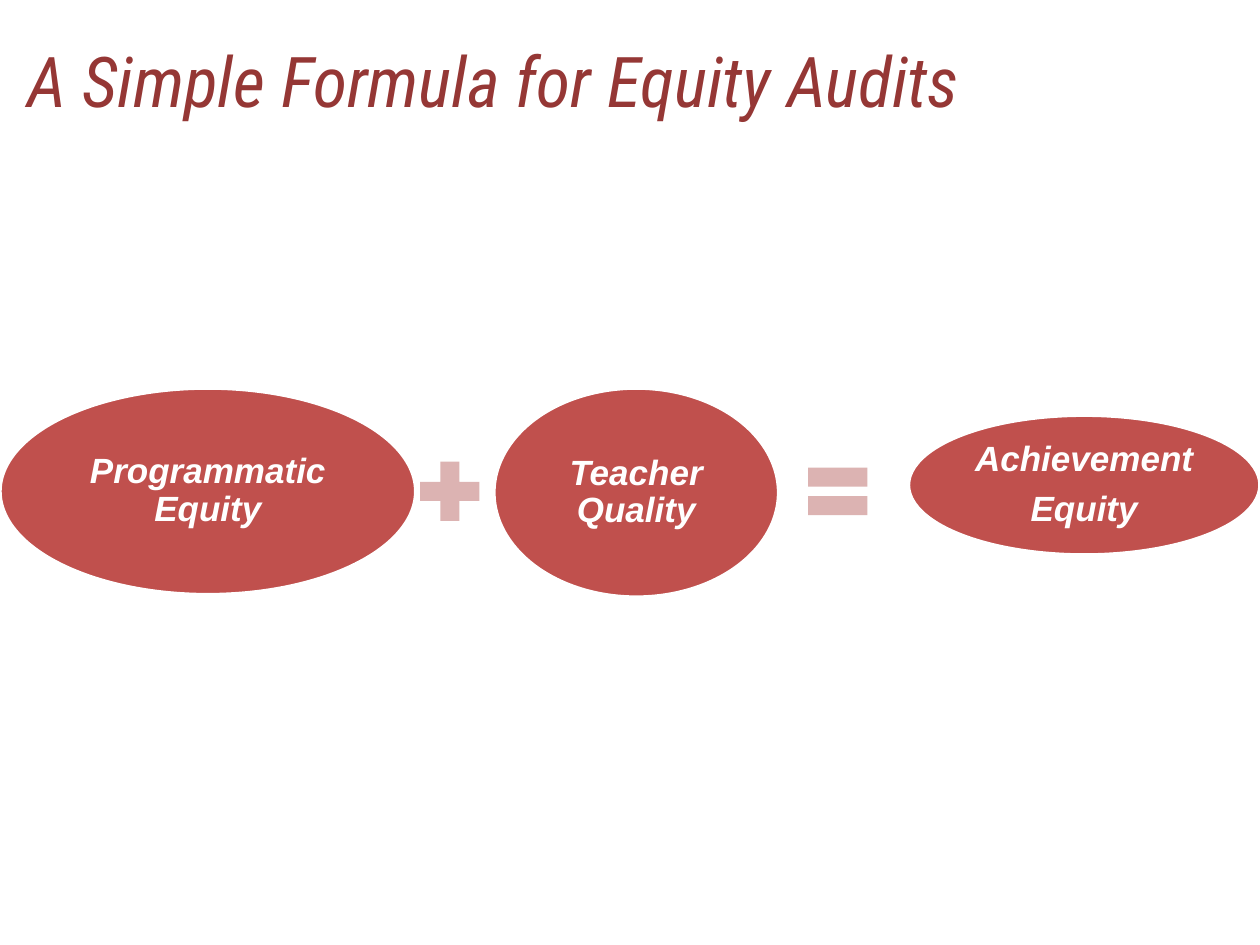
from pptx import Presentation
from pptx.dml.color import RGBColor
from pptx.enum.shapes import MSO_SHAPE
from pptx.enum.text import MSO_ANCHOR, PP_ALIGN
from pptx.util import Inches, Pt


def paint(target, color):
    target.solid()
    target.fore_color.rgb = RGBColor.from_string(color)


def style(font, name, size, color, bold):
    font.name = name
    font.size = Pt(size)
    font.bold = bold
    font.italic = True
    paint(font.fill, color)


def add_title(slide, text, box):
    title = slide.shapes.title
    title.left, title.top, title.width, title.height = map(Inches, box)
    frame = title.text_frame
    frame.text = text
    frame.margin_left = Inches(0.22)
    frame.vertical_anchor = MSO_ANCHOR.MIDDLE
    line = frame.paragraphs[0]
    line.alignment = PP_ALIGN.LEFT
    style(line.runs[0].font, "Roboto Condensed", 40, "953735", False)


def add_shape(slide, kind, box, color):
    shape = slide.shapes.add_shape(kind, *map(Inches, box))
    shape.shadow.inherit = False
    paint(shape.fill, color)
    shape.line.fill.background()
    return shape


def add_term(slide, text, box):
    oval = add_shape(slide, MSO_SHAPE.OVAL, box, "C0504D")
    paint(oval.line.fill, "FFFFFF")
    oval.line.width = Pt(2)
    frame = oval.text_frame
    frame.text = text
    frame.word_wrap = True
    frame.vertical_anchor = MSO_ANCHOR.MIDDLE
    frame.margin_left = frame.margin_right = Inches(0.03)
    frame.margin_top = frame.margin_bottom = Inches(0.03)
    for line in frame.paragraphs:
        line.alignment = PP_ALIGN.CENTER
        line.line_spacing = 0.9
        line.space_after = Pt(7)
        style(line.runs[0].font, "Arial", 20, "FFFFFF", True)


def add_formula(slide, left, mid):
    terms = [
        ("Programmatic Equity", 0, 3.3, 1.64, 0),
        ("Teacher Quality", 3.92, 2.26, 1.66, 0.01),
        ("Achievement\nEquity", 7.21, 2.79, 1.11, -0.05),
    ]
    for text, x, width, height, shift in terms:
        top = mid + shift - height / 2
        add_term(slide, text, (left + x, top, width, height))

    side = 0.64
    signs = [(MSO_SHAPE.MATH_PLUS, 3.25), (MSO_SHAPE.MATH_EQUAL, 6.33)]
    for kind, x in signs:
        add_shape(slide, kind, (left + x, mid - side / 2, side, side), "DCB3B2")


def main():
    deck = Presentation()
    deck.slide_width = Inches(10)
    deck.slide_height = Inches(7.5)
    slide = deck.slides.add_slide(deck.slide_layouts[5])
    paint(slide.background.fill, "FFFFFF")
    add_title(slide, "A Simple Formula for Equity Audits", (0, 0.17, 9, 0.92))
    add_formula(slide, 0, 3.9)
    deck.save("out.pptx")


if __name__ == "__main__":
    main()
